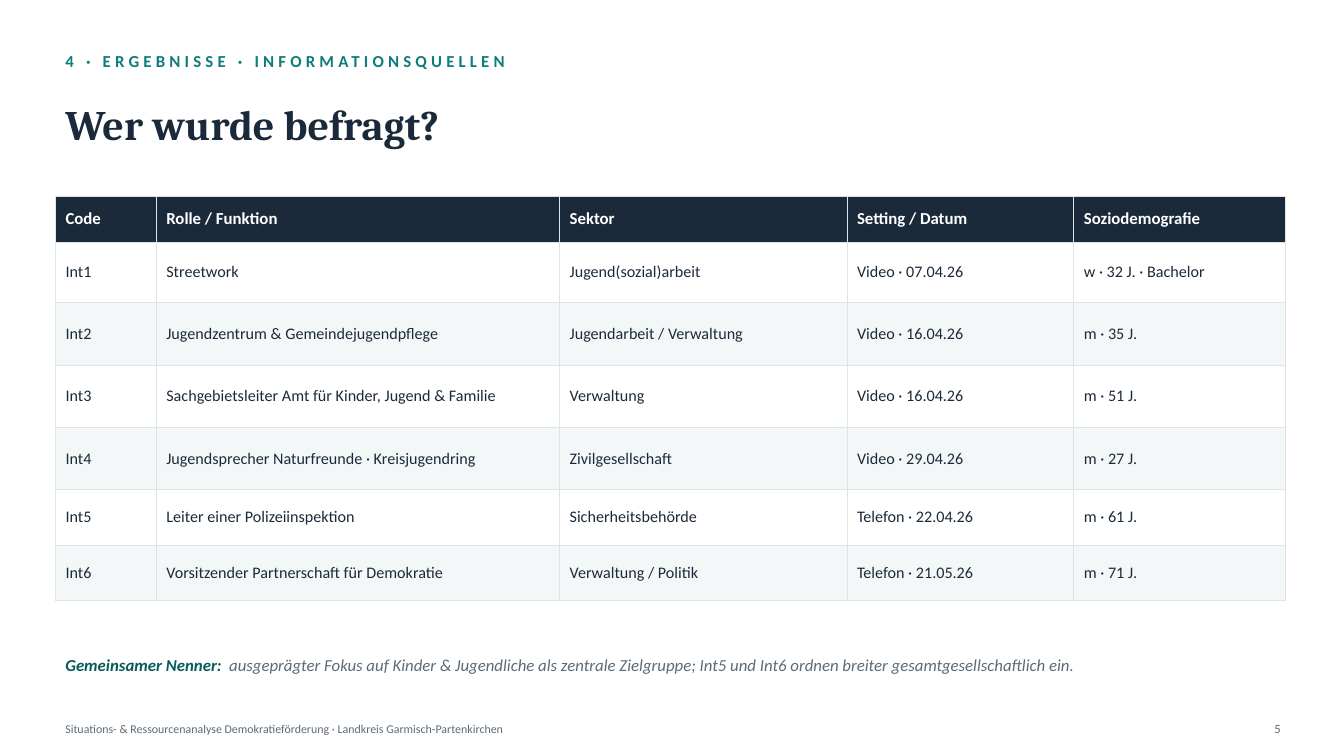
from dataclasses import dataclass

from lxml import etree
from pptx import Presentation, util as u
from pptx.dml import color
from pptx.enum import text
from pptx.oxml import ns

COLORS = {
    "navy": "1B2A3A",
    "teal": "0E7C7B",
    "deep_teal": "0A5A59",
    "slate": "5C6B78",
    "border": "DCE4E7",
    "band": "F4F7F8",
    "white": "FFFFFF",
}
STEP = u.Inches(0.05)  # one grid column or row
PAGE_COLUMNS, PAGE_ROWS = 266.6, 150
LEFT, CONTENT_WIDTH = 11, 244
BORDER_WIDTH = u.Pt(0.5)

KICKER = {"name": "Calibri", "size": 12, "bold": True, "color": "teal"}
TITLE = {"name": "Cambria", "size": 30, "bold": True, "color": "navy"}
HEADER = {"name": "Calibri", "size": 12, "bold": True, "color": "white"}
BODY = {"name": "Calibri", "size": 11.5, "bold": False, "color": "navy"}
LABEL = {"name": "Calibri", "size": 12, "bold": True, "italic": True, "color": "deep_teal"}
REMARK = LABEL | {"bold": False, "color": "slate"}
FOOTER = {"name": "Calibri", "size": 8.5, "color": "slate"}
PAGE_NUMBER = FOOTER | {"size": 9}


@dataclass(frozen=True)
class Span:
    words: str
    style: dict
    spacing: float = 0


@dataclass(frozen=True)
class TextBlock:
    column: float
    row: float
    columns: float
    rows: float
    spans: tuple[Span, ...]
    align: text.PP_ALIGN = text.PP_ALIGN.LEFT
    tab: float = 0


TEXT_BLOCKS = (
    TextBlock(LEFT, 9, 160, 6, (Span("4 · ERGEBNISSE · INFORMATIONSQUELLEN", KICKER, 3),)),
    TextBlock(LEFT, 15.6, CONTENT_WIDTH, 18, (Span("Wer wurde befragt?", TITLE),)),
    TextBlock(LEFT, 127, CONTENT_WIDTH, 10, (
        Span("Gemeinsamer Nenner:\t", LABEL),
        Span("ausgeprägter Fokus auf Kinder & Jugendliche als zentrale Zielgruppe; "
             "Int5 und Int6 ordnen breiter gesamtgesellschaftlich ein.", REMARK),
    ), tab=32.5),
    TextBlock(LEFT, 141.6, 200, 6, (
        Span("Situations- & Ressourcenanalyse Demokratieförderung · "
             "Landkreis Garmisch-Partenkirchen", FOOTER),
    )),
    TextBlock(248, 141.6, 8, 6, (Span("5", PAGE_NUMBER),), text.PP_ALIGN.RIGHT),
)

TABLE_TOP = 39
COLUMN_WIDTHS = (20, 80, 57, 45, 42)
ROW_HEIGHTS = (9, 12, 12.4, 12.4, 12.4, 11, 11)
INTERVIEWS = (
    ("Code", "Rolle / Funktion", "Sektor", "Setting / Datum", "Soziodemografie"),
    ("Int1", "Streetwork", "Jugend(sozial)arbeit", "Video · 07.04.26", "w · 32 J. · Bachelor"),
    ("Int2", "Jugendzentrum & Gemeindejugendpflege", "Jugendarbeit / Verwaltung",
     "Video · 16.04.26", "m · 35 J."),
    ("Int3", "Sachgebietsleiter Amt für Kinder, Jugend & Familie", "Verwaltung",
     "Video · 16.04.26", "m · 51 J."),
    ("Int4", "Jugendsprecher Naturfreunde · Kreisjugendring", "Zivilgesellschaft",
     "Video · 29.04.26", "m · 27 J."),
    ("Int5", "Leiter einer Polizeiinspektion", "Sicherheitsbehörde",
     "Telefon · 22.04.26", "m · 61 J."),
    ("Int6", "Vorsitzender Partnerschaft für Demokratie", "Verwaltung / Politik",
     "Telefon · 21.05.26", "m · 71 J."),
)


def grid(steps: float) -> u.Emu:
    return u.Emu(round(steps * STEP))


def rgb(name: str) -> color.RGBColor:
    return color.RGBColor.from_string(COLORS[name])


def add_span(para, span: Span) -> None:
    run = para.add_run()
    run.text = span.words
    for key, value in span.style.items():
        if key == "color":
            run.font.color.rgb = rgb(value)
        else:
            setattr(run.font, key, u.Pt(value) if key == "size" else value)
    if span.spacing:
        run.font._element.set("spc", str(round(span.spacing * 100)))


def add_tab_stop(para, steps: float) -> None:
    stops = etree.SubElement(para._p.get_or_add_pPr(), ns.qn("a:tabLst"))
    etree.SubElement(stops, ns.qn("a:tab"), pos=str(grid(steps)), algn="l")


def add_text_block(page, block: TextBlock) -> None:
    box = page.shapes.add_textbox(
        *map(grid, (block.column, block.row, block.columns, block.rows)))
    frame = box.text_frame
    frame.word_wrap = True
    frame.vertical_anchor = text.MSO_ANCHOR.MIDDLE
    para = frame.paragraphs[0]
    para.alignment = block.align
    if block.tab:
        add_tab_stop(para, block.tab)
    for span in block.spans:
        add_span(para, span)


def add_borders(cell) -> None:
    properties = cell._tc.get_or_add_tcPr()
    for side in ("lnL", "lnR", "lnT", "lnB"):
        line = etree.SubElement(properties, ns.qn(f"a:{side}"), w=str(BORDER_WIDTH))
        fill = etree.SubElement(line, ns.qn("a:solidFill"))
        etree.SubElement(fill, ns.qn("a:srgbClr"), val=COLORS["border"])


def fill_cell(cell, words: str, style: dict, background: str) -> None:
    add_borders(cell)
    cell.fill.solid()
    cell.fill.fore_color.rgb = rgb(background)
    cell.vertical_anchor = text.MSO_ANCHOR.MIDDLE
    add_span(cell.text_frame.paragraphs[0], Span(words, style))


def add_interview_table(page) -> None:
    table = page.shapes.add_table(
        len(ROW_HEIGHTS), len(COLUMN_WIDTHS), grid(LEFT), grid(TABLE_TOP),
        grid(sum(COLUMN_WIDTHS)), grid(sum(ROW_HEIGHTS))).table
    table.horz_banding = False
    for column, width in zip(table.columns, COLUMN_WIDTHS):
        column.width = grid(width)
    for index, (height, entries) in enumerate(zip(ROW_HEIGHTS, INTERVIEWS)):
        row = table.rows[index]
        row.height = grid(height)
        style = BODY if index else HEADER
        background = ("band" if index % 2 == 0 else "white") if index else "navy"
        for cell, words in zip(row.cells, entries):
            fill_cell(cell, words, style, background)


def main() -> None:
    deck = Presentation()
    deck.slide_width, deck.slide_height = grid(PAGE_COLUMNS), grid(PAGE_ROWS)
    page = deck.slides.add_slide(deck.slide_layouts[6])
    heading, remainder = TEXT_BLOCKS[:2], TEXT_BLOCKS[2:]
    for block in heading:
        add_text_block(page, block)
    add_interview_table(page)
    for block in remainder:
        add_text_block(page, block)
    deck.save("out.pptx")


if __name__ == "__main__":
    main()
